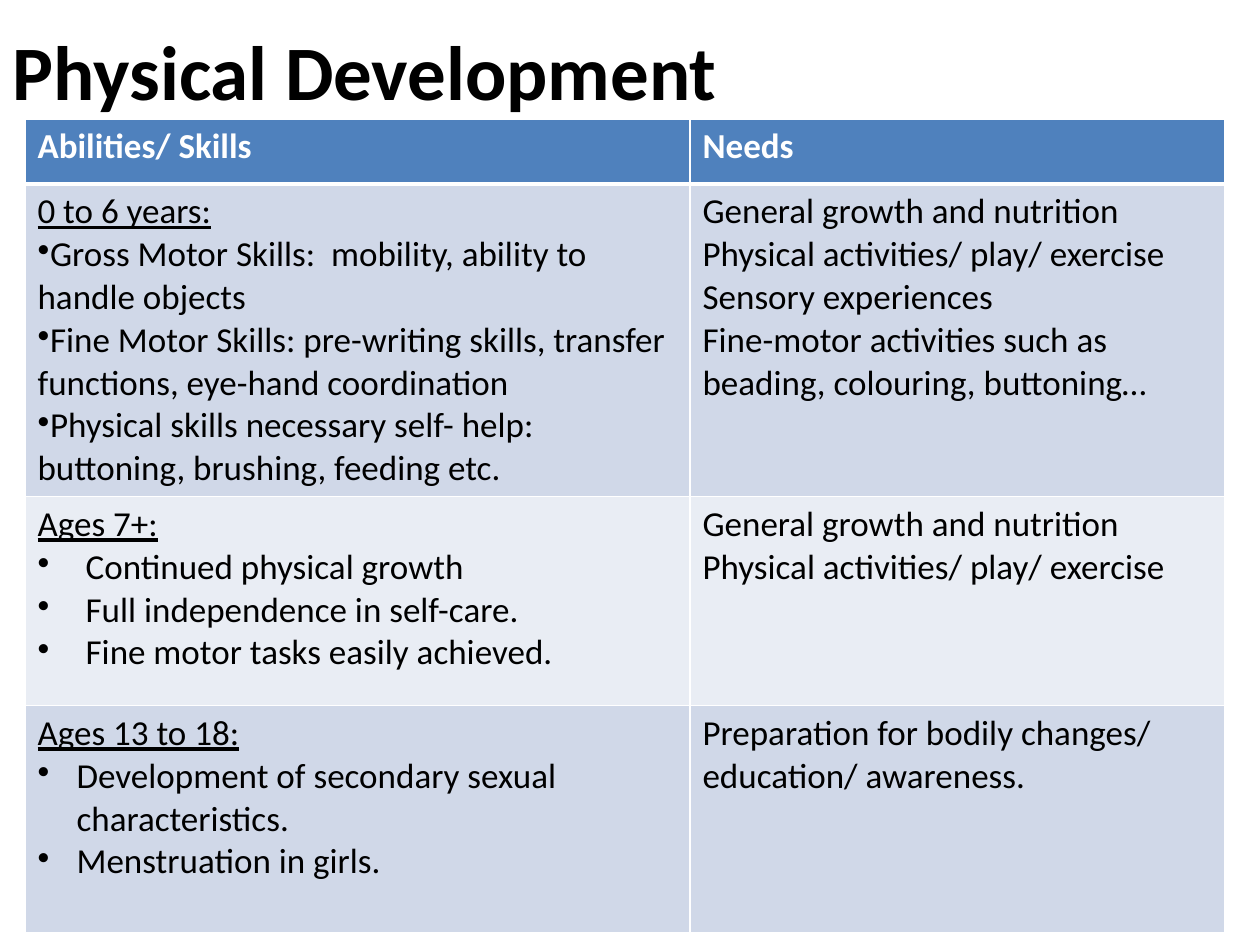
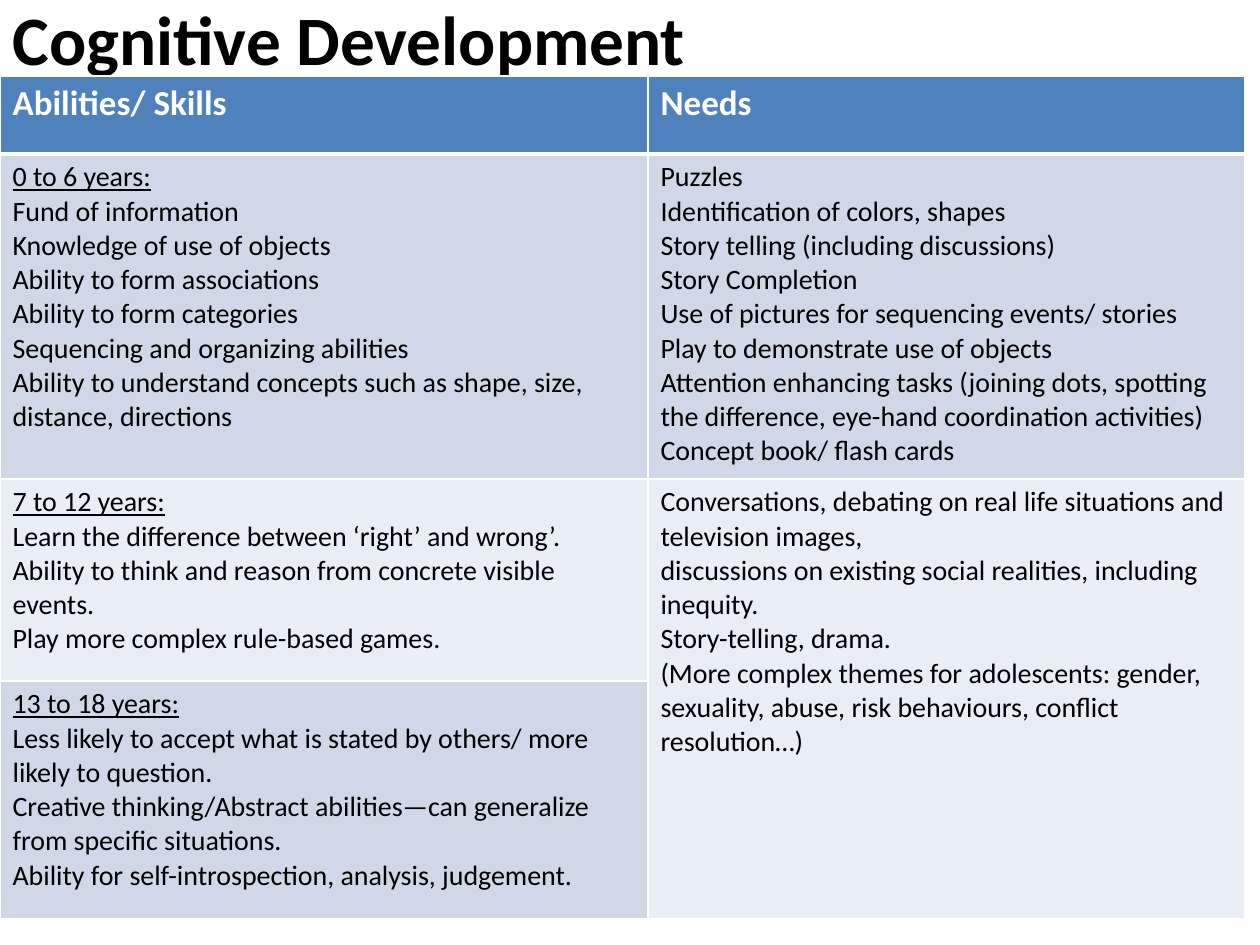
from lxml import etree
from pptx import Presentation
from pptx.dml.color import RGBColor
from pptx.enum.text import MSO_ANCHOR, MSO_AUTO_SIZE, PP_ALIGN
from pptx.oxml.ns import qn
from pptx.util import Pt

LEFT, MIDDLE, FIXED = PP_ALIGN.LEFT, MSO_ANCHOR.MIDDLE, MSO_AUTO_SIZE.NONE
SCALE = 914400 / 126
FONT = "Calibri"
WHITE, BLACK, BLUE = "FFFFFF", "000000", "4F81BD"
BANDS = ("D0D8E8", "E9EDF4")
HEADS = ("Abilities/ Skills", "Needs")

SLIDES = [
    dict(
        title="Physical Development", size=44, box=(0, 16, 1134, 107),
        spot=(25, 119), cols=(665, 535), head=65, body=20, merge=None,
        rows=[
            dict(high=312, age="0 to 6 years:", dent=0, skills=[
                "Gross Motor Skills:  mobility, ability to handle objects",
                "Fine Motor Skills: pre-writing skills, transfer functions, eye-hand coordination",
                "Physical skills necessary self- help: buttoning, brushing, feeding etc.",
            ], needs=[
                "General growth and nutrition",
                "Physical activities/ play/ exercise",
                "Sensory experiences",
                "Fine-motor activities such as beading, colouring, buttoning…",
            ]),
            dict(high=209, age="Ages 7+:", dent=48, skills=[
                "Continued physical growth",
                "Full independence in self-care.",
                "Fine motor tasks easily achieved.",
            ], needs=[
                "General growth and nutrition",
                "Physical activities/ play/ exercise",
            ]),
            dict(high=227, age="Ages 13 to 18:", dent=39, skills=[
                "Development of secondary sexual characteristics.",
                "Menstruation in girls.",
            ], needs=["Preparation for bodily changes/ education/ awareness."]),
        ],
    ),
    dict(
        title="Cognitive Development", size=39.6, box=(0, 0, 1134, 76),
        spot=(0, 76), cols=(648, 597), head=78, body=16, merge=(2, 3),
        rows=[
            dict(high=325, age="0 to 6 years:", dent=None, skills=[
                "Fund of information",
                "Knowledge of use of objects",
                "Ability to form associations",
                "Ability to form categories",
                "Sequencing and organizing abilities",
                "Ability to understand concepts such as shape, size, distance, directions",
            ], needs=[
                "Puzzles",
                "Identification of colors, shapes",
                "Story telling (including discussions)",
                "Story Completion",
                "Use of pictures for sequencing events/ stories",
                "Play to demonstrate use of objects",
                "Attention enhancing tasks (joining dots, spotting the difference, eye-hand coordination activities)",
                "Concept book/ flash cards",
            ]),
            dict(high=202, age="7 to 12 years:", dent=None, skills=[
                "Learn the difference between ‘right’ and wrong’.",
                "Ability to think and reason from concrete visible events.",
                "Play more complex rule-based games.",
            ], needs=[
                "Conversations, debating on real life situations and television images,",
                "discussions on existing social realities, including inequity.",
                "Story-telling, drama.",
                "(More complex themes for adolescents: gender, sexuality, abuse, risk behaviours, conflict resolution…)",
            ]),
            dict(high=238, age="13 to 18 years:", dent=None, skills=[
                "Less likely to accept what is stated by others/ more likely to question.",
                "Creative thinking/Abstract abilities—can generalize from specific situations.",
                "Ability for self-introspection, analysis, judgement.",
            ], needs=[]),
        ],
    ),
]


def px(n):
    return round(n * SCALE)


def hue(code):
    return RGBColor.from_string(code)


def write(frame, lines, size, color=BLACK, bold=False, lead=False, dent=None):
    for i, line in enumerate(lines):
        para = frame.paragraphs[0] if i == 0 else frame.add_paragraph()
        para.alignment = LEFT
        run = para.add_run()
        run.text = line
        font = run.font
        font.name, font.size, font.bold = FONT, Pt(size), bold
        font.color.rgb = hue(color)
        font.underline = lead and i == 0
        if dent is not None and i > 0:
            props = para._p.get_or_add_pPr()
            props.set("marL", str(px(dent)))
            props.set("indent", str(-px(dent)))
            etree.SubElement(props, qn("a:buChar")).set("char", "•")


def paint(cell, fill, top):
    props = cell._tc.get_or_add_tcPr()
    edges = {"lnL": 1, "lnR": 1}
    if top:
        edges["lnT"] = 1
    edges["lnB"] = 3 if top else 1
    for tag, width in edges.items():
        line = etree.SubElement(props, qn("a:" + tag), w=str(Pt(width)))
        solid = etree.SubElement(line, qn("a:solidFill"))
        etree.SubElement(solid, qn("a:srgbClr"), val=WHITE)
    cell.fill.solid()
    cell.fill.fore_color.rgb = hue(fill)


def add_title(slide, data):
    shape = slide.shapes.title
    shape.left, shape.top, shape.width, shape.height = map(px, data["box"])
    frame = shape.text_frame
    frame.word_wrap, frame.auto_size, frame.vertical_anchor = True, FIXED, MIDDLE
    write(frame, [data["title"]], data["size"], bold=True)


def add_grid(slide, data):
    rows, cols = data["rows"], data["cols"]
    highs = [data["head"]] + [row["high"] for row in rows]
    area = map(px, (*data["spot"], sum(cols), sum(highs)))
    grid = slide.shapes.add_table(len(highs), len(cols), *area).table
    grid.first_row = grid.horz_banding = False
    for col, wide in zip(grid.columns, cols):
        col.width = px(wide)
    for r, high in enumerate(highs):
        grid.rows[r].height = px(high)
        for c in range(len(cols)):
            paint(grid.cell(r, c), BANDS[(r - 1) % 2] if r else BLUE, r == 0)
    for c, head in enumerate(HEADS):
        write(grid.cell(0, c).text_frame, [head], 20, color=WHITE, bold=True)
    if data["merge"]:
        first, last = data["merge"]
        grid.cell(first, 1).merge(grid.cell(last, 1))
    for r, row in enumerate(rows, 1):
        write(grid.cell(r, 0).text_frame, [row["age"], *row["skills"]],
              data["body"], lead=True, dent=row["dent"])
        write(grid.cell(r, 1).text_frame, row["needs"], data["body"])


def main():
    deck = Presentation()
    deck.slide_width, deck.slide_height = px(1260), px(945)
    for data in SLIDES:
        slide = deck.slides.add_slide(deck.slide_layouts[5])
        add_title(slide, data)
        add_grid(slide, data)
    deck.save("out.pptx")


if __name__ == "__main__":
    main()
